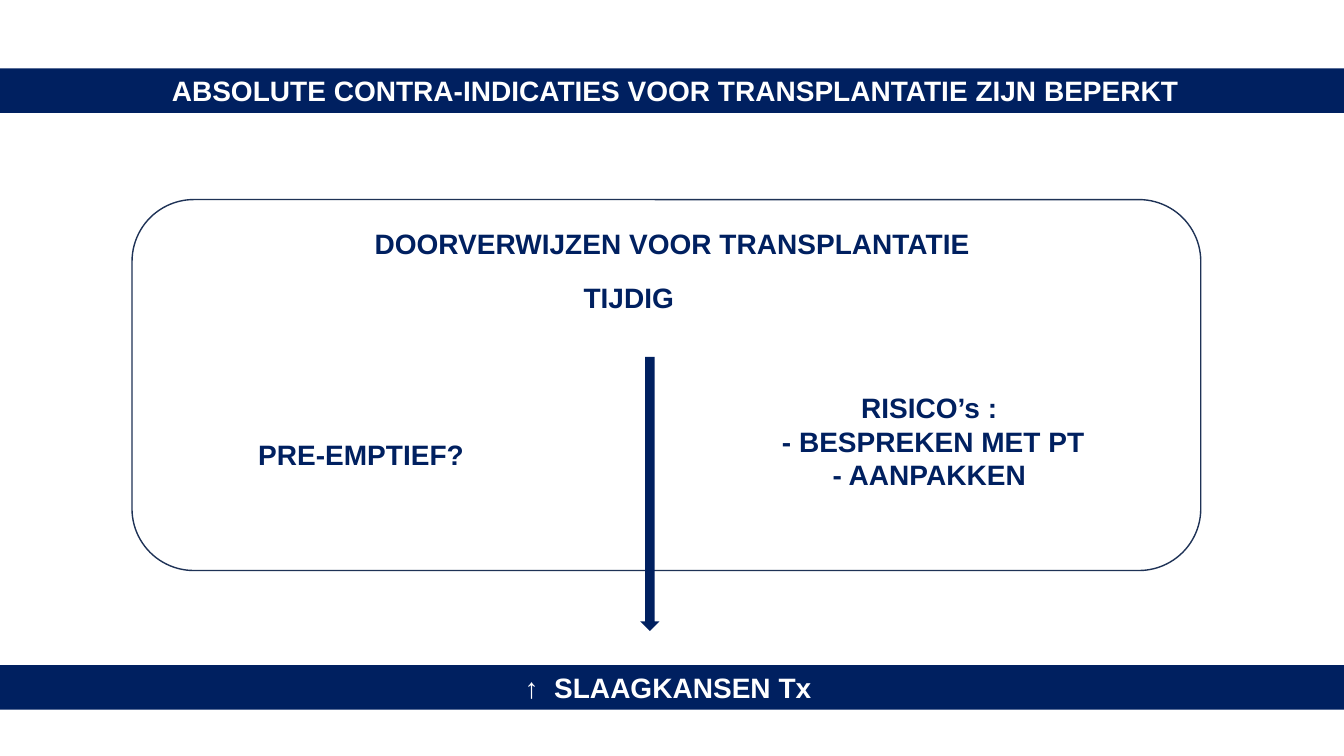
from pptx import Presentation
from pptx.dml.color import RGBColor
from pptx.enum.shapes import MSO_SHAPE
from pptx.enum.text import MSO_ANCHOR, PP_ALIGN
from pptx.util import Inches, Pt

COLORS = {"navy": "002060", "white": "FFFFFF", "outline": "1E3256"}
SLIDE_WIDTH, SLIDE_HEIGHT = 13.33, 7.5
LINE_HEIGHT = 0.44


def color(name):
    """Return the named colour."""
    return RGBColor.from_string(COLORS[name])


def add_shape(slide, kind, left, top, width, height, fill=None, line=None):
    """Add a shadowless preset shape with optional fill and outline."""
    shape = slide.shapes.add_shape(
        kind, Inches(left), Inches(top), Inches(width), Inches(height)
    )
    shape.shadow.inherit = False
    if fill:
        shape.fill.solid()
        shape.fill.fore_color.rgb = color(fill)
    else:
        shape.fill.background()
    if line:
        shape.line.color.rgb = color(line)
        shape.line.width = Pt(1)
    else:
        shape.line.fill.background()
    return shape


def add_label(slide, lines, left, top, width, height=LINE_HEIGHT,
              fill="white", text_color="navy"):
    """Add a filled rectangle with bold centred lines of text."""
    shape = add_shape(slide, MSO_SHAPE.RECTANGLE, left, top, width, height, fill)
    frame = shape.text_frame
    frame.word_wrap = True
    frame.vertical_anchor = MSO_ANCHOR.MIDDLE
    for index, line in enumerate(lines):
        paragraph = frame.add_paragraph() if index else frame.paragraphs[0]
        paragraph.alignment = PP_ALIGN.CENTER
        run = paragraph.add_run()
        run.text = line
        run.font.name = "Arial"
        run.font.size = Pt(20)
        run.font.bold = True
        run.font.color.rgb = color(text_color)


def add_banner(slide, text, top):
    """Add a navy banner across the full slide width."""
    add_label(slide, [text], 0, top, SLIDE_WIDTH, fill="navy", text_color="white")


def main():
    """Build and save the slide."""
    presentation = Presentation()
    presentation.slide_width = Inches(SLIDE_WIDTH)
    presentation.slide_height = Inches(SLIDE_HEIGHT)
    slide = presentation.slides.add_slide(presentation.slide_layouts[6])

    add_banner(slide, " ABSOLUTE CONTRA-INDICATIES VOOR TRANSPLANTATIE ZIJN BEPERKT", 0.68)
    add_banner(slide, "↑  SLAAGKANSEN Tx ", 6.6)

    add_label(slide, ["DOORVERWIJZEN VOOR TRANSPLANTATIE "], 0.04, 2.19, SLIDE_WIDTH)
    risks = ["RISICO’s : ", "- BESPREKEN MET PT", "- AANPAKKEN "]
    add_label(slide, risks, 6, 3.82, 6.51, 1.11)
    add_label(slide, ["PRE-EMPTIEF? "], 0.81, 4.29, 5.62)
    add_label(slide, ["TIJDIG "], 0.37, 2.73, 11.81)

    add_shape(slide, MSO_SHAPE.ROUNDED_RECTANGLE, 1.31, 1.98, 10.6, 3.68, line="outline")
    add_shape(slide, MSO_SHAPE.DOWN_ARROW, 6.35, 3.54, 0.19, 2.72, fill="navy")

    presentation.save("out.pptx")


if __name__ == "__main__":
    main()
